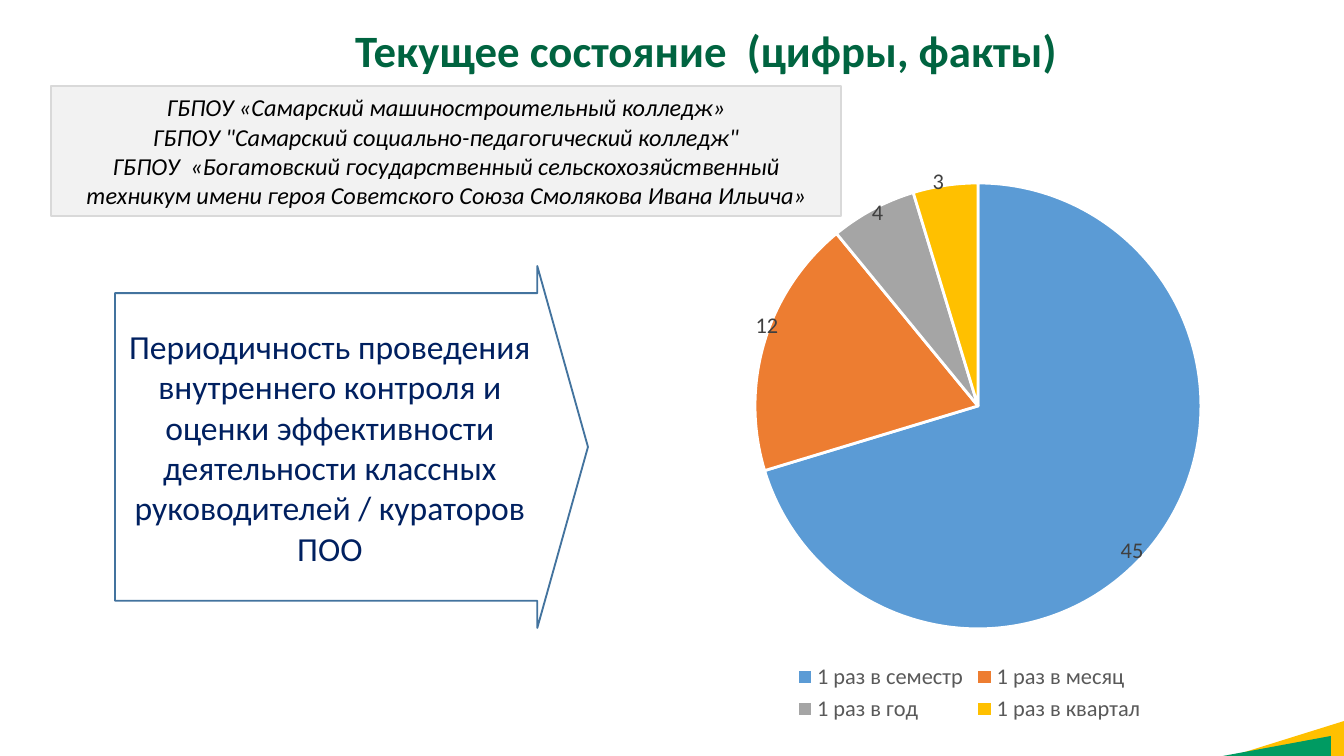
import lxml.etree
import pptx
import pptx.util
import pptx.dml.color
import pptx.chart.data
import pptx.enum.chart
import pptx.enum.shapes
import pptx.enum.text
import pptx.oxml.ns

PX = 914400 / 134.4
FONT = "Calibri"
SHAPES = pptx.enum.shapes.MSO_SHAPE
FREQUENCIES = {
    "1 раз в семестр": (45, "5B9BD5", (-43, -8)),
    "1 раз в месяц": (12, "ED7D31", (24, -1)),
    "1 раз в год": (4, "A5A5A5", (15, 22)),
    "1 раз в квартал": (3, "FFC000", (1, 18)),
}
COLLEGES = [
    "ГБПОУ «Самарский машиностроительный колледж»",
    "ГБПОУ \"Самарский социально-педагогический колледж\"",
    "ГБПОУ  «Богатовский государственный сельскохозяйственный "
    "техникум имени героя Советского Союза Смолякова Ивана Ильича»",
]
TOPIC = ("Периодичность проведения внутреннего контроля и оценки эффективности "
         "деятельности классных руководителей / кураторов ПОО")


def emu(*lengths):
    """Turn px lengths into EMU."""
    return [pptx.util.Emu(round(length * PX)) for length in lengths]


def paint(color_format, color):
    """Apply a hex colour to a colour format."""
    color_format.rgb = pptx.dml.color.RGBColor.from_string(color)


def style_font(font, size, color, bold=False, italic=False):
    """Set the face, size, colour and emphasis of a font."""
    font.name, font.size = FONT, pptx.util.Pt(size)
    font.bold, font.italic = bold, italic
    paint(font.color, color)


def write(text_frame, lines, size, color, **emphasis):
    """Write centred paragraphs into a wrapping text frame."""
    text_frame.word_wrap = True
    text_frame.text = "\n".join(lines)
    for paragraph in text_frame.paragraphs:
        paragraph.alignment = pptx.enum.text.PP_ALIGN.CENTER
        style_font(paragraph.font, size, color, **emphasis)


def add_shape(slide, kind, box, fill, line=None):
    """Add a flat preset shape with an optional thin outline."""
    shape = slide.shapes.add_shape(kind, *emu(*box))
    shape.shadow.inherit = False
    shape.fill.solid()
    paint(shape.fill.fore_color, fill)
    if line:
        paint(shape.line.color, line)
        shape.line.width = pptx.util.Pt(1)
    else:
        shape.line.fill.background()
    return shape


def add_corner(slide, right, bottom):
    """Place the two corner wedges against the right and bottom edges."""
    for gap, length, height, color in ((0, 112, 35, "FFC000"), (13, 108, 20, "009B62")):
        center_x, center_y = right - gap - length / 2, bottom - height / 2
        box = (center_x - height / 2, center_y - length / 2, height, length)
        add_shape(slide, SHAPES.RIGHT_TRIANGLE, box, color).rotation = 270


def add_title(slide, box):
    """Place the slide heading."""
    title = slide.shapes.add_textbox(*emu(*box))
    write(title.text_frame, ["Текущее состояние  (цифры, факты)"], 24, "006440", bold=True)


def add_topic_arrow(slide, box):
    """Place the arrow that names the question."""
    arrow = add_shape(slide, SHAPES.RIGHT_ARROW, box, "FFFFFF", "43739E")
    arrow.adjustments[0], arrow.adjustments[1] = 0.85, 0.14
    arrow.text_frame.vertical_anchor = pptx.enum.text.MSO_ANCHOR.MIDDLE
    write(arrow.text_frame, [TOPIC], 18, "002060")


def set_layout(parent, index, settings):
    """Give a chart part a manual layout as its child at the index."""
    qn = pptx.oxml.ns.qn
    for old_layout in parent.findall(qn("c:layout")):
        parent.remove(old_layout)
    layout = lxml.etree.Element(qn("c:layout"))
    manual = lxml.etree.SubElement(layout, qn("c:manualLayout"))
    for name, value in settings.items():
        lxml.etree.SubElement(manual, qn("c:" + name)).set("val", str(value))
    parent.insert(index, layout)


def add_frequency_pie(slide, box, pie_box):
    """Place the pie of control frequencies with its legend."""
    width, height = box[2:]
    data = pptx.chart.data.CategoryChartData()
    data.categories = list(FREQUENCIES)
    data.add_series("Series 1", [value for value, _, _ in FREQUENCIES.values()])
    chart = slide.shapes.add_chart(
        pptx.enum.chart.XL_CHART_TYPE.PIE, *emu(*box), data).chart
    chart.has_title = False
    style_font(chart.font, 10, "000000")
    chart.has_legend = True
    chart.legend.position = pptx.enum.chart.XL_LEGEND_POSITION.BOTTOM
    chart.legend.include_in_layout = False
    style_font(chart.legend.font, 12, "595959")
    plot = chart.plots[0]
    plot.vary_by_categories = True
    series = plot.series[0]
    best_fit = pptx.enum.chart.XL_LABEL_POSITION.BEST_FIT
    series.data_labels.show_value = True
    series.data_labels.show_percentage = False
    series.data_labels.position = best_fit
    style_font(series.data_labels.font, 12, "404040")
    for index, (_, color, _) in enumerate(FREQUENCIES.values()):
        point = series.points[index]
        point.format.fill.solid()
        paint(point.format.fill.fore_color, color)
        paint(point.format.line.color, "FFFFFF")
        point.format.line.width = pptx.util.Pt(1.5)
        style_font(point.data_label.font, 12, "404040")
        point.data_label.position = best_fit
    labels = chart.element.xpath(".//c:dLbl")
    for label, (_, _, (shift_x, shift_y)) in zip(labels, FREQUENCIES.values()):
        set_layout(label, 1, {"x": round(shift_x / width, 2),
                              "y": round(shift_y / height, 2)})
    left, top, pie_width, pie_height = pie_box
    set_layout(chart.element.xpath(".//c:plotArea")[0], 0, {
        "layoutTarget": "inner", "xMode": "edge", "yMode": "edge",
        "x": left / width, "y": top / height,
        "w": pie_width / width, "h": pie_height / height})


def add_colleges(slide, box):
    """Place the panel that lists the colleges."""
    panel = add_shape(slide, SHAPES.RECTANGLE, box, "F2F2F2", "D9D9D9")
    panel.text_frame.vertical_anchor = pptx.enum.text.MSO_ANCHOR.MIDDLE
    write(panel.text_frame, COLLEGES, 13, "000000", italic=True)


def main():
    """Build and save the slide."""
    presentation = pptx.Presentation()
    presentation.slide_width, presentation.slide_height = emu(1344, 756)
    slide = presentation.slides.add_slide(presentation.slide_layouts[6])
    add_corner(slide, 1344, 756)
    add_title(slide, (310, 16, 792, 67))
    add_topic_arrow(slide, (115, 266, 473, 362))
    add_frequency_pie(slide, (614, 130, 711, 598), (141, 53, 446, 446))
    add_colleges(slide, (51, 86, 790, 130))
    presentation.save("out.pptx")


if __name__ == "__main__":
    main()
